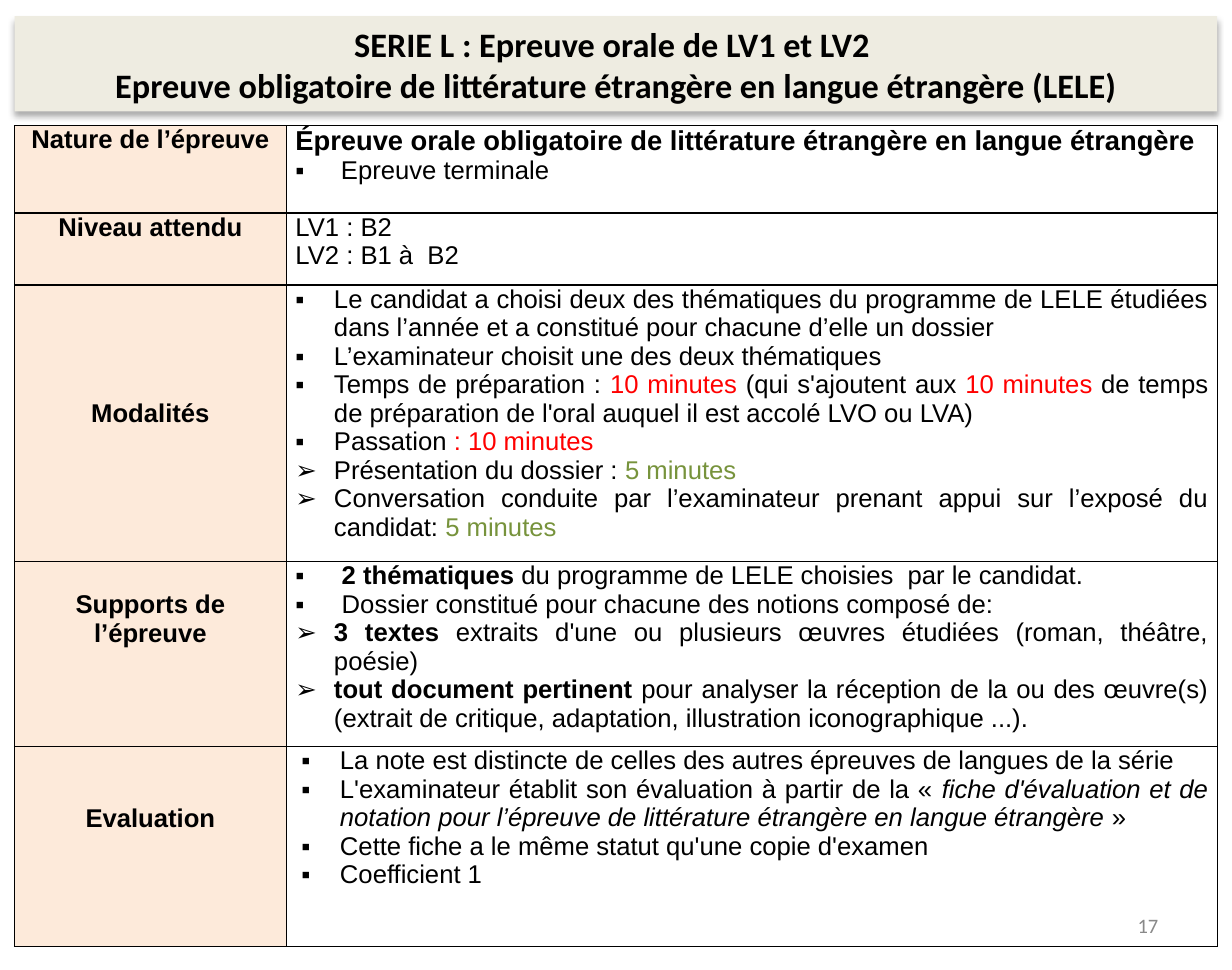
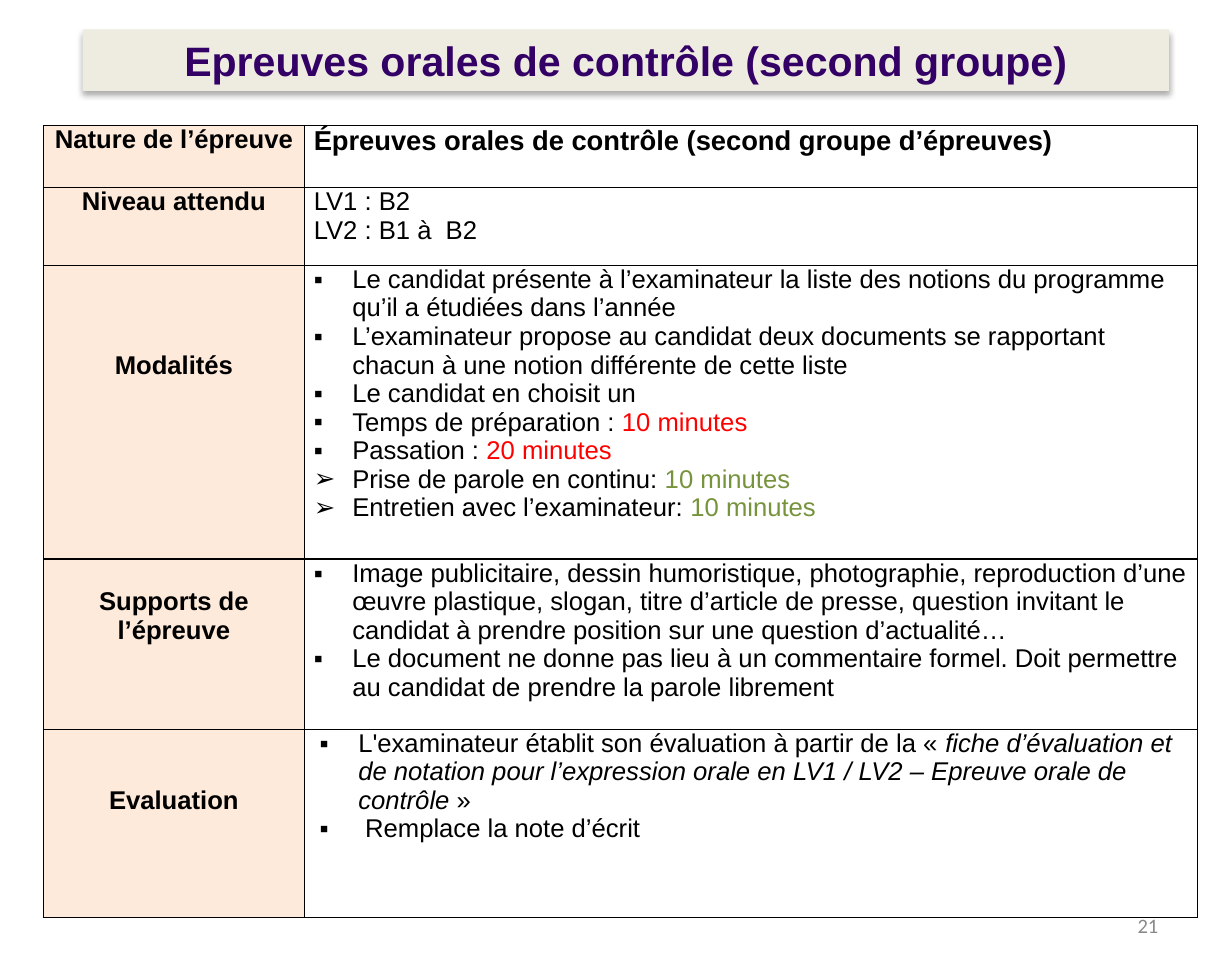
"""Build two slides that describe oral language exams in titled tables."""
from dataclasses import dataclass

from lxml import etree
from pptx import Presentation
from pptx.dml.color import RGBColor
from pptx.enum.shapes import MSO_SHAPE
from pptx.enum.text import MSO_ANCHOR, PP_ALIGN
from pptx.oxml.ns import qn
from pptx.util import Pt

BLACK = RGBColor(0x00, 0x00, 0x00)
RED = RGBColor(0xFF, 0x00, 0x00)
GREEN = RGBColor(0x77, 0x93, 0x3C)
PURPLE = RGBColor(0x33, 0x00, 0x66)
GREY = RGBColor(0x89, 0x89, 0x89)
BEIGE = RGBColor(0xEE, 0xEC, 0xE1)
PEACH = RGBColor(0xFD, 0xEA, 0xDA)

RECTANGLE = MSO_SHAPE.RECTANGLE
MIDDLE = MSO_ANCHOR.MIDDLE
LEFT, CENTER, RIGHT, JUSTIFY = PP_ALIGN.LEFT, PP_ALIGN.CENTER, PP_ALIGN.RIGHT, PP_ALIGN.JUSTIFY

SLIDE_WIDTH, SLIDE_HEIGHT = Pt(720), Pt(567)
SQUARE, ARROW = "▪", "➢"
HANGING = 22.5
LINE_HEIGHT = 16.75
CELL_MARGIN = 5.4
TABLE_TOP = 73.5
BORDER_SIDES = ("a:lnL", "a:lnR", "a:lnT", "a:lnB")


@dataclass(frozen=True)
class Run:
    """A piece of text with one look."""
    text: str
    color: RGBColor = BLACK
    bold: bool = False
    italic: bool = False
    size: float = 15
    font: str = "Arial"


@dataclass(frozen=True)
class Line:
    """A paragraph with its runs, bullet and indents in points."""
    runs: tuple[Run, ...]
    bullet: str = ""
    left: float = HANGING
    hanging: float = HANGING
    align: PP_ALIGN = LEFT


@dataclass(frozen=True)
class Row:
    """A table row; lead counts the lines left free above its label."""
    label: str
    height: float
    lines: tuple[Line, ...]
    lead: int = 0


@dataclass(frozen=True)
class Banner:
    """The title band of a slide."""
    left: float
    top: float
    width: float
    height: float
    titles: tuple[Run, ...]


@dataclass(frozen=True)
class ExamSlide:
    """A slide with its banner, exam table and page number."""
    banner: Banner
    table_left: float
    columns: tuple[float, float]
    rows: tuple[Row, ...]
    number: str


def plain(*texts: str) -> tuple[Line, ...]:
    """Return unbulleted lines."""
    return tuple(Line((Run(text),)) for text in texts)


def heading(text: str) -> Line:
    """Return the bold first line of a table."""
    return Line((Run(text, bold=True, size=16),))


def item(*parts: str | Run, bullet: str = SQUARE, left: float = HANGING,
         hanging: float = HANGING, align: PP_ALIGN = LEFT) -> Line:
    """Return a bulleted line from strings and styled runs."""
    runs = tuple(Run(part) if isinstance(part, str) else part for part in parts)
    return Line(runs, bullet, left, hanging, align)


def justified(*parts: str | Run, bullet: str = SQUARE, left: float = HANGING,
              hanging: float = HANGING) -> Line:
    """Return a justified bulleted line."""
    return item(*parts, bullet=bullet, left=left, hanging=hanging, align=JUSTIFY)


LITERATURE = ExamSlide(
    Banner(8.65, 9.5, 702.7, 55.7, (
        Run("SERIE L : Epreuve orale de LV1 et LV2 ", bold=True, size=20, font="Calibri"),
        Run("Epreuve obligatoire de littérature étrangère en langue étrangère (LELE)",
            bold=True, size=20, font="Calibri"))),
    8.5, (158.8, 544.2),
    (
        Row("Nature de l’épreuve", 51, (
            heading("Épreuve orale obligatoire de littérature étrangère en langue étrangère"),
            item("Epreuve terminale", left=26.6, hanging=26.6))),
        Row("Niveau attendu", 42.2, plain("LV1 : B2", "LV2 : B1 à  B2")),
        Row("Modalités", 161.7, (
            justified("Le candidat a choisi deux des thématiques du programme de LELE étudiées "
                      "dans l’année et a constitué pour chacune d’elle un dossier"),
            justified("L’examinateur choisit une des deux thématiques"),
            justified("Temps de préparation : ", Run("10 minutes ", RED),
                      "(qui s'ajoutent aux ", Run("10 minutes", RED),
                      " de temps de préparation de l'oral auquel il est accolé LVO ou LVA)"),
            justified("Passation ", Run(": 10 minutes ", RED)),
            justified("Présentation du dossier : ", Run("5 minutes", GREEN), bullet=ARROW),
            justified("Conversation conduite par l’examinateur prenant appui sur l’exposé "
                      "du candidat: ", Run("5 minutes", GREEN), bullet=ARROW)), 4),
        Row("Supports de l’épreuve", 108.1, (
            justified(Run("2 thématiques ", bold=True),
                      "du programme de LELE choisies  par le candidat.", left=27, hanging=27),
            justified("Dossier constitué pour chacune des notions composé de:",
                      left=27, hanging=27),
            justified(Run("3 textes ", bold=True),
                      "extraits d'une ou plusieurs œuvres étudiées (roman, théâtre, poésie)",
                      bullet=ARROW),
            justified(Run("tout document pertinent ", bold=True),
                      "pour analyser la réception de la ou des œuvre(s) (extrait de critique, "
                      "adaptation, illustration iconographique ...). ", bullet=ARROW)), 1),
        Row("Evaluation", 117, (
            justified("La note est distincte de celles des autres épreuves de langues "
                      "de la série", left=26),
            justified("L'examinateur établit son évaluation à partir de la « ",
                      Run("fiche d'évaluation et de notation pour l’épreuve de littérature "
                          "étrangère en langue étrangère", italic=True), " »", left=26),
            justified("Cette fiche a le même statut qu'une copie d'examen", left=26),
            justified("Coefficient 1", left=26)), 2),
    ),
    "17",
)

SECOND_GROUP = ExamSlide(
    Banner(48.25, 17.2, 635, 36, (
        Run("Epreuves orales de contrôle (second groupe)", PURPLE, True, size=24),)),
    25.3, (152.7, 522),
    (
        Row("Nature de l’épreuve", 36, (
            heading("Épreuves orales de contrôle (second groupe d’épreuves)"),)),
        Row("Niveau attendu", 45.6, plain("LV1 : B2", "LV2 : B1 à  B2")),
        Row("Modalités", 171.7, (
            item("Le candidat présente à l’examinateur la liste des notions du programme "
                 "qu’il a étudiées dans l’année"),
            item("L’examinateur propose au candidat deux documents se rapportant chacun "
                 "à une notion différente de cette liste"),
            item("Le candidat en choisit un"),
            item("Temps de préparation : ", Run("10 minutes", RED)),
            item("Passation : ", Run("20 minutes", RED)),
            item("Prise de parole en continu: ", Run("10 minutes", GREEN), bullet=ARROW),
            item("Entretien avec l’examinateur: ", Run("10 minutes", GREEN), bullet=ARROW)), 3),
        Row("Supports de l’épreuve", 99.5, (
            item("Image publicitaire, dessin humoristique, photographie, reproduction d’une "
                 "œuvre plastique, slogan, titre d’article de presse, question invitant le "
                 "candidat à prendre position sur une question d’actualité…"),
            item("Le document ne donne pas lieu à un commentaire formel. Doit permettre "
                 "au candidat de prendre la parole librement")), 1),
        Row("Evaluation", 110, (
            item("L'examinateur établit son évaluation à partir de la « ",
                 Run("fiche d’évaluation et de notation pour l’expression orale en "
                     "LV1 / LV2 – Epreuve orale de contrôle", italic=True), " »", left=26),
            item("Remplace la note d’écrit", left=30, hanging=26.5)), 2),
    ),
    "21",
)


def write_lines(text_frame, lines: tuple[Line, ...]) -> None:
    """Write lines into a text frame run by run."""
    text_frame.word_wrap = True
    for index, line in enumerate(lines):
        paragraph = text_frame.add_paragraph() if index else text_frame.paragraphs[0]
        paragraph.alignment = line.align
        if line.bullet:
            properties = paragraph._p.get_or_add_pPr()
            properties.set("marL", str(Pt(line.left)))
            properties.set("indent", str(-Pt(line.hanging)))
            etree.SubElement(properties, qn("a:buFont"), typeface="Arial")
            etree.SubElement(properties, qn("a:buChar"), char=line.bullet)
        for piece in line.runs:
            run = paragraph.add_run()
            run.text = piece.text
            run.font.name = piece.font
            run.font.size = Pt(piece.size)
            run.font.bold = piece.bold
            run.font.italic = piece.italic
            run.font.color.rgb = piece.color


def add_banner(slide, banner: Banner) -> None:
    """Draw the title band with its soft shadow."""
    shape = slide.shapes.add_shape(RECTANGLE, Pt(banner.left), Pt(banner.top),
                                   Pt(banner.width), Pt(banner.height))
    shape.fill.solid()
    shape.fill.fore_color.rgb = BEIGE
    shape.line.fill.background()
    shape.shadow.inherit = False
    effects = shape._element.spPr.find(qn("a:effectLst"))
    shadow = etree.SubElement(effects, qn("a:outerShdw"), blurRad=str(Pt(3.5)),
                              dist=str(Pt(2.2)), dir="5400000", rotWithShape="0")
    color = etree.SubElement(shadow, qn("a:srgbClr"), val=str(BLACK))
    etree.SubElement(color, qn("a:alpha"), val="32000")
    shape.text_frame.vertical_anchor = MIDDLE
    write_lines(shape.text_frame, tuple(Line((run,), align=CENTER) for run in banner.titles))


def add_borders(cell) -> None:
    """Give a cell a thin black border on every side."""
    properties = cell._tc.get_or_add_tcPr()
    for side in BORDER_SIDES:
        border = etree.SubElement(properties, qn(side), w=str(Pt(1)))
        fill = etree.SubElement(border, qn("a:solidFill"))
        etree.SubElement(fill, qn("a:srgbClr"), val=str(BLACK))


def fill_cell(cell, lines: tuple[Line, ...], top: float = 0) -> None:
    """Set the margins, borders and text of a cell."""
    cell.margin_left = cell.margin_right = Pt(CELL_MARGIN)
    cell.margin_top, cell.margin_bottom = Pt(top), Pt(0)
    add_borders(cell)
    write_lines(cell.text_frame, lines)


def add_exam_table(slide, exam: ExamSlide) -> None:
    """Draw the table of labels and exam details."""
    frame = slide.shapes.add_table(len(exam.rows), len(exam.columns), Pt(exam.table_left),
                                   Pt(TABLE_TOP), Pt(sum(exam.columns)),
                                   Pt(sum(row.height for row in exam.rows)))
    table = frame.table
    table.first_row = table.horz_banding = False
    for column, width in zip(table.columns, exam.columns):
        column.width = Pt(width)
    for index, row in enumerate(exam.rows):
        table.rows[index].height = Pt(row.height)
        label, details = table.cell(index, 0), table.cell(index, 1)
        label_line = Line((Run(row.label, bold=True),), align=CENTER)
        fill_cell(label, (label_line,), row.lead * LINE_HEIGHT)
        label.fill.solid()
        label.fill.fore_color.rgb = PEACH
        fill_cell(details, row.lines)
        details.fill.background()


def add_page_number(slide, number: str) -> None:
    """Write the page number at the bottom right."""
    box = slide.shapes.add_textbox(Pt(516), Pt(525.5), Pt(168), Pt(30.2))
    box.text_frame.vertical_anchor = MIDDLE
    write_lines(box.text_frame, (Line((Run(number, GREY, size=12, font="Calibri"),),
                                      align=RIGHT),))


def main() -> None:
    """Build and save the presentation."""
    presentation = Presentation()
    presentation.slide_width, presentation.slide_height = SLIDE_WIDTH, SLIDE_HEIGHT
    for exam in (LITERATURE, SECOND_GROUP):
        slide = presentation.slides.add_slide(presentation.slide_layouts[6])
        add_banner(slide, exam.banner)
        add_exam_table(slide, exam)
        add_page_number(slide, exam.number)
    presentation.save("out.pptx")


if __name__ == "__main__":
    main()
